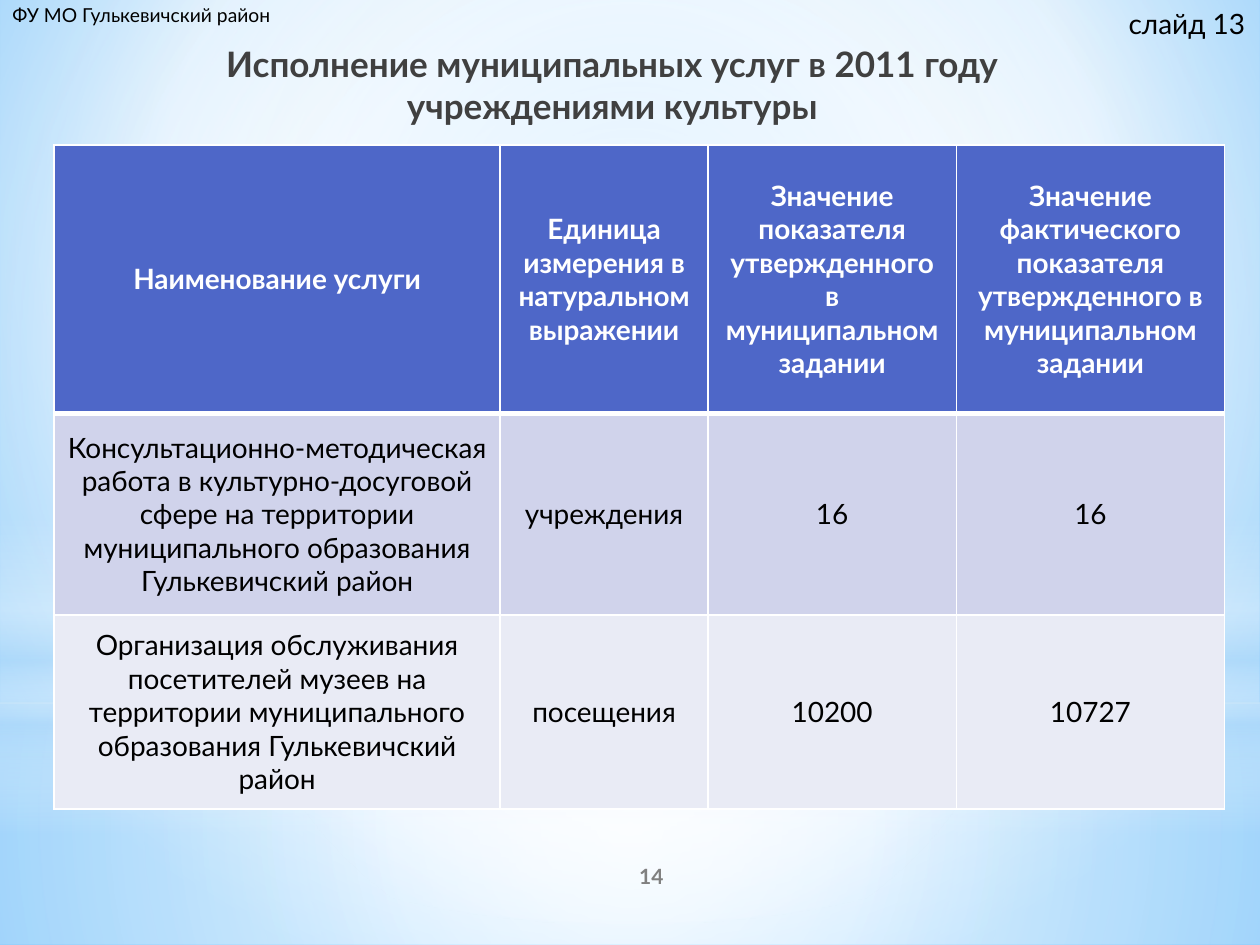
import pptx
import pptx.dml.color
import pptx.enum.shapes
import pptx.enum.text
import pptx.oxml
import pptx.oxml.ns
import pptx.util

FONT = "Lato"
WIDTH, HEIGHT = 10, 7.5
CENTER = pptx.enum.text.PP_ALIGN.CENTER
LEFT = pptx.enum.text.PP_ALIGN.LEFT
MIDDLE = pptx.enum.text.MSO_ANCHOR.MIDDLE
TOP = pptx.enum.text.MSO_ANCHOR.TOP
RECT = pptx.enum.shapes.MSO_SHAPE.RECTANGLE
OVAL = pptx.enum.shapes.MSO_SHAPE.OVAL
CIRCLE = '<a:path path="circle"><a:fillToRect l="{}" t="{}" r="{}" b="{}"/></a:path>'
FROM_MIDDLE = CIRCLE.format(50000, 50000, 50000, 50000)
FROM_UPPER_PART = CIRCLE.format(20000, 10000, 20000, 60000)
DOWNWARD = '<a:lin ang="5400000" scaled="0"/>'

SKY = [(0, "9ED5FF", 100), (60, "FFFFFF", 100), (100, "5BB9FF", 100)]
HAZE = [
    (RECT, (0, 5.58, 10, 1.92), FROM_MIDDLE,
     [(0, "FFFFFF", 91), (37, "FFFFFF", 76), (100, "B4DCFA", 79)]),
    (RECT, (0, 0, 10, 5.58), FROM_MIDDLE,
     [(0, "FFFFFF", 89), (48, "FFFFFF", 62), (100, "B4DCFA", 79)]),
    (RECT, (0, 4.12, 10, 2.5), DOWNWARD,
     [(0, "FFFFFF", 0), (29, "FFFFFF", 30), (45, "B4DCFA", 40),
      (55, "FFFFFF", 26), (65, "B4DCFA", 60), (100, "FFFFFF", 0)]),
    (OVAL, (0, 1.75, 10, 5.58), FROM_MIDDLE,
     [(0, "FFFFFF", 100), (56, "FFFFFF", 0)]),
]
COLUMNS = [3.54, 1.65, 1.97, 2.13]
ROWS = [2.13, 1.6, 1.54]
ROW_FILLS = ["4E67C8", "D0D3EB", "E9EBF5"]
SERVICES = [
    ["Наименование услуги",
     "Единица измерения в натуральном выражении",
     "Значение показателя утвержденного в муниципальном задании",
     "Значение фактического показателя утвержденного в муниципальном задании"],
    ["Консультационно-методическая работа в культурно-досуговой сфере "
     "на территории муниципального образования Гулькевичский район",
     "учреждения", "16", "16"],
    ["Организация обслуживания посетителей музеев на территории "
     "муниципального образования Гулькевичский район",
     "посещения", "10200", "10727"],
]


def color(value):
    return pptx.dml.color.RGBColor.from_string(value)


def inches(box):
    return [pptx.util.Inches(length) for length in box]


def drawing(xml):
    return pptx.oxml.parse_xml(xml.replace(">", " " + pptx.oxml.ns.nsdecls("a") + ">", 1))


def apply_gradient(fill, properties, stops, direction):
    fill.solid()
    marks = "".join(
        f'<a:gs pos="{place * 1000}"><a:srgbClr val="{tint}">'
        f'<a:alpha val="{opacity * 1000}"/></a:srgbClr></a:gs>'
        for place, tint, opacity in stops)
    gradient = drawing(
        f'<a:gradFill rotWithShape="1"><a:gsLst>{marks}</a:gsLst>{direction}</a:gradFill>')
    plain = properties.find(pptx.oxml.ns.qn("a:solidFill"))
    properties.replace(plain, gradient)


def write(frame, words, size, tint, bold=False, align=LEFT, anchor=TOP):
    frame.vertical_anchor = anchor
    paragraph = frame.paragraphs[0]
    paragraph.alignment = align
    run = paragraph.add_run()
    run.text = words
    run.font.name = FONT
    run.font.size = pptx.util.Pt(size)
    run.font.bold = bold
    run.font.color.rgb = color(tint)


def add_backdrop(slide):
    fill = slide.background.fill
    qn = pptx.oxml.ns.qn
    apply_gradient(fill, slide.element.find(".//" + qn("p:bgPr")), SKY, FROM_UPPER_PART)
    for outline, box, direction, stops in HAZE:
        layer = slide.shapes.add_shape(outline, *inches(box))
        layer.shadow.inherit = False
        layer.line.fill.background()
        apply_gradient(layer.fill, layer.element.spPr, stops, direction)


def add_title(slide, words):
    title = slide.shapes.title
    title.element.getparent().append(title.element)
    title.left, title.top, title.width, title.height = inches((1.3, 0.29, 7.12, 0.87))
    title.text_frame.auto_size = pptx.enum.text.MSO_AUTO_SIZE.NONE
    write(title.text_frame, words, 20, "404040", True, CENTER)


def add_label(slide, box, words, size):
    label = slide.shapes.add_textbox(*inches(box)).text_frame
    label.word_wrap = False
    label.auto_size = pptx.enum.text.MSO_AUTO_SIZE.SHAPE_TO_FIT_TEXT
    write(label, words, size, "000000")


def add_page_number(slide, words):
    number = slide.shapes.add_textbox(*inches((4.17, 6.75, 2, 0.4))).text_frame
    number.word_wrap = True
    write(number, words, 12, "808080", True, CENTER, MIDDLE)


def add_borders(cell, top, bottom):
    properties = cell._tc.get_or_add_tcPr()
    weights = {"lnL": 1, "lnR": 1, "lnT": top, "lnB": bottom}
    for place, (side, points) in enumerate(weights.items()):
        properties.insert(place, drawing(
            f'<a:{side} w="{points * 12700}"><a:solidFill><a:srgbClr val="FFFFFF"/>'
            f'</a:solidFill></a:{side}>'))


def add_services_table(slide):
    box = inches((0.43, 1.15, sum(COLUMNS), sum(ROWS)))
    table = slide.shapes.add_table(len(ROWS), len(COLUMNS), *box).table
    for column, width in zip(table.columns, COLUMNS):
        column.width = pptx.util.Inches(width)
    for index, (row, height) in enumerate(zip(table.rows, ROWS)):
        row.height = pptx.util.Inches(height)
        header = index == 0
        for cell, words in zip(row.cells, SERVICES[index]):
            cell.fill.solid()
            cell.fill.fore_color.rgb = color(ROW_FILLS[index])
            add_borders(cell, 3 if index == 1 else 1, 3 if header else 1)
            cell.vertical_anchor = MIDDLE
            write(cell.text_frame, words, 16, "FFFFFF" if header else "000000",
                  header, CENTER, MIDDLE)


def main():
    deck = pptx.Presentation()
    deck.slide_width, deck.slide_height = inches((WIDTH, HEIGHT))
    slide = deck.slides.add_slide(deck.slide_layouts[5])
    add_backdrop(slide)
    add_page_number(slide, "14")
    add_title(slide, "Исполнение муниципальных услуг в 2011 году учреждениями культуры")
    add_services_table(slide)
    add_label(slide, (8.86, 0, 1.14, 0.37), "слайд 13", 16)
    add_label(slide, (0, -0.02, 2.25, 0.29), "ФУ МО Гулькевичский район", 11)
    deck.save("out.pptx")


if __name__ == "__main__":
    main()
